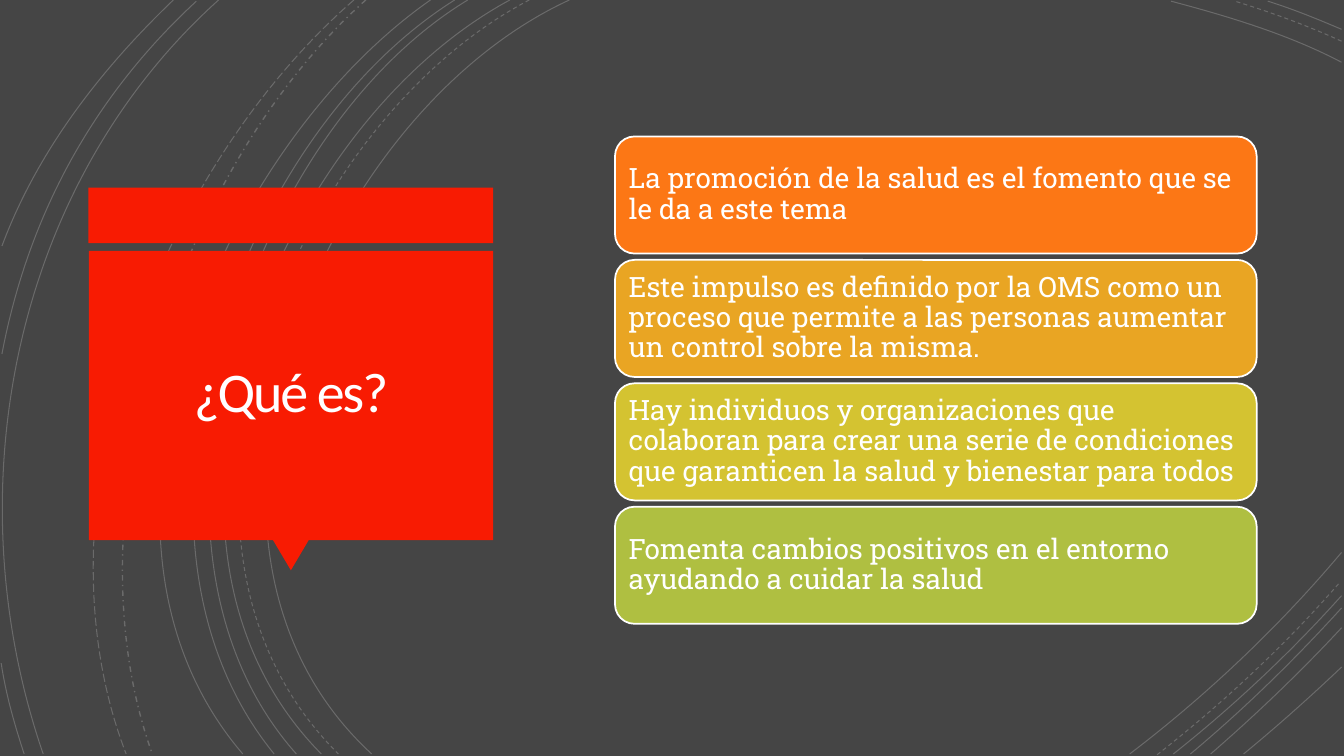
from pptx import Presentation
from pptx.dml.color import RGBColor
from pptx.enum.dml import MSO_LINE
from pptx.enum.shapes import MSO_SHAPE
from pptx.enum.text import MSO_ANCHOR, PP_ALIGN
from pptx.util import Cm, Pt
from lxml.etree import SubElement
from pptx.oxml.ns import qn

GREY = RGBColor(0x45, 0x45, 0x45)
RED = RGBColor(0xF8, 0x1B, 0x02)
WHITE = RGBColor(0xFF, 0xFF, 0xFF)
CREAM = RGBColor(0xFF, 0xFE, 0xFF)
ORANGE = RGBColor(0xFC, 0x77, 0x15)
AMBER = RGBColor(0xE9, 0xA5, 0x23)
YELLOW = RGBColor(0xD4, 0xC3, 0x31)
GREEN = RGBColor(0xAF, 0xBF, 0x41)

SOLID, DASH = MSO_LINE.SOLID, MSO_LINE.DASH
FOOT = 19  # lower end of the long arcs, in cm

# Long arcs: top x, two control points, foot x, dash, width
SWEEPS = [
    (14.35, (8, 2.92), (3.63, 13.72), 9.37, SOLID, 0.75),
    (13.34, (7.24, 3.18), (3.12, 13.64), 8.53, DASH, 0.75),
    (12.85, (6.86, 3.23), (2.79, 13.64), 8.1, SOLID, 0.75),
    (11.79, (6.2, 3.38), (2.79, 13.74), 7.47, SOLID, 0.75),
    (11.46, (5.87, 3.51), (2.46, 13.54), 6.91, SOLID, 0.75),
    (10.85, (5.51, 3.73), (1.35, 13.44), 6.12, SOLID, 0.75),
    (9.22, (4.47, 4.22), (1.65, 12.93), 3.84, MSO_LINE.DASH_DOT, 1),
    (8.92, (3.99, 4.29), (0.74, 12.67), 3.18, MSO_LINE.LONG_DASH, 0.75),
    (5.51, (0.28, 4.7), (-1.17, 12.45), 1.09, SOLID, 0.75),
]

# Short arcs: four Bezier points, dash
CORNERS = [
    # top right
    ((33.81, 1.57), (32.46, 0.86), (30.94, 0.41), (29.51, 0.03), SOLID),
    ((33.81, 1.04), (32.94, 0.64), (32, 0.3), (31.12, 0.03), DASH),
    ((33.81, 0.74), (33.2, 0.48), (32.59, 0.23), (31.95, 0.03), SOLID),
    # bottom right
    ((28.47, 19), (30.4, 17.53), (32.23, 15.8), (33.81, 13.92), SOLID),
    ((29.16, 19.02), (30.81, 17.73), (32.39, 16.26), (33.78, 14.66), DASH),
    ((29.57, 19), (31.07, 17.81), (32.51, 16.46), (33.81, 15.01), SOLID),
    ((30, 19), (31.34, 17.88), (32.61, 16.64), (33.81, 15.32), SOLID),
    ((30.51, 19), (31.65, 18.01), (32.77, 16.94), (33.81, 15.82), SOLID),
    ((31.34, 19), (32.18, 18.31), (33, 17.58), (33.81, 16.81), SOLID),
    # left edge
    ((4.95, 0.03), (2.34, 2.44), (0.71, 5.44), (0.05, 8.92), SOLID),
    ((0.03, 16.71), (0.15, 17.5), (0.36, 18.24), (0.61, 19), SOLID),
    ((4.37, 0), (2.54, 1.75), (0.94, 3.81), (0.05, 6.2), SOLID),
]

CARDS = [
    (ORANGE, "La promoción de la salud es el fomento que se le da a este tema"),
    (AMBER, "Este impulso es definido por la OMS como un proceso que permite "
            "a las personas aumentar un control sobre la misma."),
    (YELLOW, "Hay individuos y organizaciones que colaboran para crear una serie "
             "de condiciones que garanticen la salud y bienestar para todos"),
    (GREEN, "Fomenta cambios positivos en el entorno ayudando a cuidar la salud"),
]


def write(shape, text, font="Roboto Slab", size=20, color=WHITE,
          align=PP_ALIGN.LEFT, lead=0.9, inset=0.2, track=0):
    frame = shape.text_frame
    frame.word_wrap = True
    frame.vertical_anchor = MSO_ANCHOR.MIDDLE
    frame.margin_left = frame.margin_right = Cm(inset)
    frame.margin_top = frame.margin_bottom = Cm(inset)
    para = frame.paragraphs[0]
    para.alignment = align
    para.line_spacing = lead
    run = para.add_run()
    run.text = text
    run.font.name = font
    run.font.size = Pt(size)
    run.font.color.rgb = color
    if track:
        run.font._element.set("spc", str(round(track * 100)))


def bend(shape):
    """Turn the three segments of an outline into one cubic curve."""
    trace = shape._element.find(".//" + qn("a:path"))
    curve = SubElement(trace, qn("a:cubicBezTo"))
    for leg in trace.findall(qn("a:lnTo")):
        curve.append(leg[0])
        trace.remove(leg)


class Deck:
    """The current slide and the style of its elements."""

    def __init__(self, slide):
        self.slide = slide
        self.edge = Pt(1.25)
        self.haze = 20  # opacity of the arcs, percent
        back = slide.background.fill
        back.solid()
        back.fore_color.rgb = GREY

    def arc(self, a, b, c, d, dash, width=0.75):
        start, *rest = [(Cm(x), Cm(y)) for x, y in (a, b, c, d)]
        pen = self.slide.shapes.build_freeform(*start, scale=1.0)
        pen.add_line_segments(rest, close=False)
        arc = pen.convert_to_shape()
        bend(arc)
        arc.shadow.inherit = False
        arc.fill.background()
        arc.line.width = Pt(width)
        arc.line.color.rgb = WHITE
        arc.line.dash_style = dash
        tint = arc.line._ln.find(".//" + qn("a:srgbClr"))
        SubElement(tint, qn("a:alpha")).set("val", str(self.haze * 1000))

    def block(self, kind, x, y, w, h, fill, edge=None):
        block = self.slide.shapes.add_shape(kind, Cm(x), Cm(y), Cm(w), Cm(h))
        block.shadow.inherit = False
        block.fill.solid()
        block.fill.fore_color.rgb = fill
        if edge is None:
            block.line.fill.background()
        else:
            block.line.color.rgb = edge
            block.line.width = self.edge
        return block


def main():
    show = Presentation()
    show.slide_width, show.slide_height = Cm(33.87), Cm(19.05)
    deck = Deck(show.slides.add_slide(show.slide_layouts[6]))

    # Background arcs
    for top, b, c, foot, dash, width in SWEEPS:
        deck.arc((top, 0), b, c, (foot, FOOT), dash, width)
    for corner in CORNERS:
        deck.arc(*corner)

    # Red title callout
    deck.block(MSO_SHAPE.RECTANGLE, 2.23, 4.73, 10.2, 1.4, RED)
    tip = deck.block(MSO_SHAPE.ISOSCELES_TRIANGLE, 6.88, 13.61, 0.9, 0.76, RED)
    tip.rotation = 180
    title = deck.block(MSO_SHAPE.RECTANGLE, 2.24, 6.32, 10.19, 7.29, RED)
    write(title, "¿Qué es?", font="Calibri", size=40, color=CREAM,
          align=PP_ALIGN.CENTER, lead=0.85, inset=0.64, track=-1.5)

    # Stacked cards
    for row, (fill, text) in enumerate(CARDS):
        card = deck.block(MSO_SHAPE.ROUNDED_RECTANGLE,
                          15.5, 3.44 + 3.11 * row, 16.17, 2.95, fill, WHITE)
        write(card, text)

    show.save("out.pptx")


if __name__ == "__main__":
    main()
